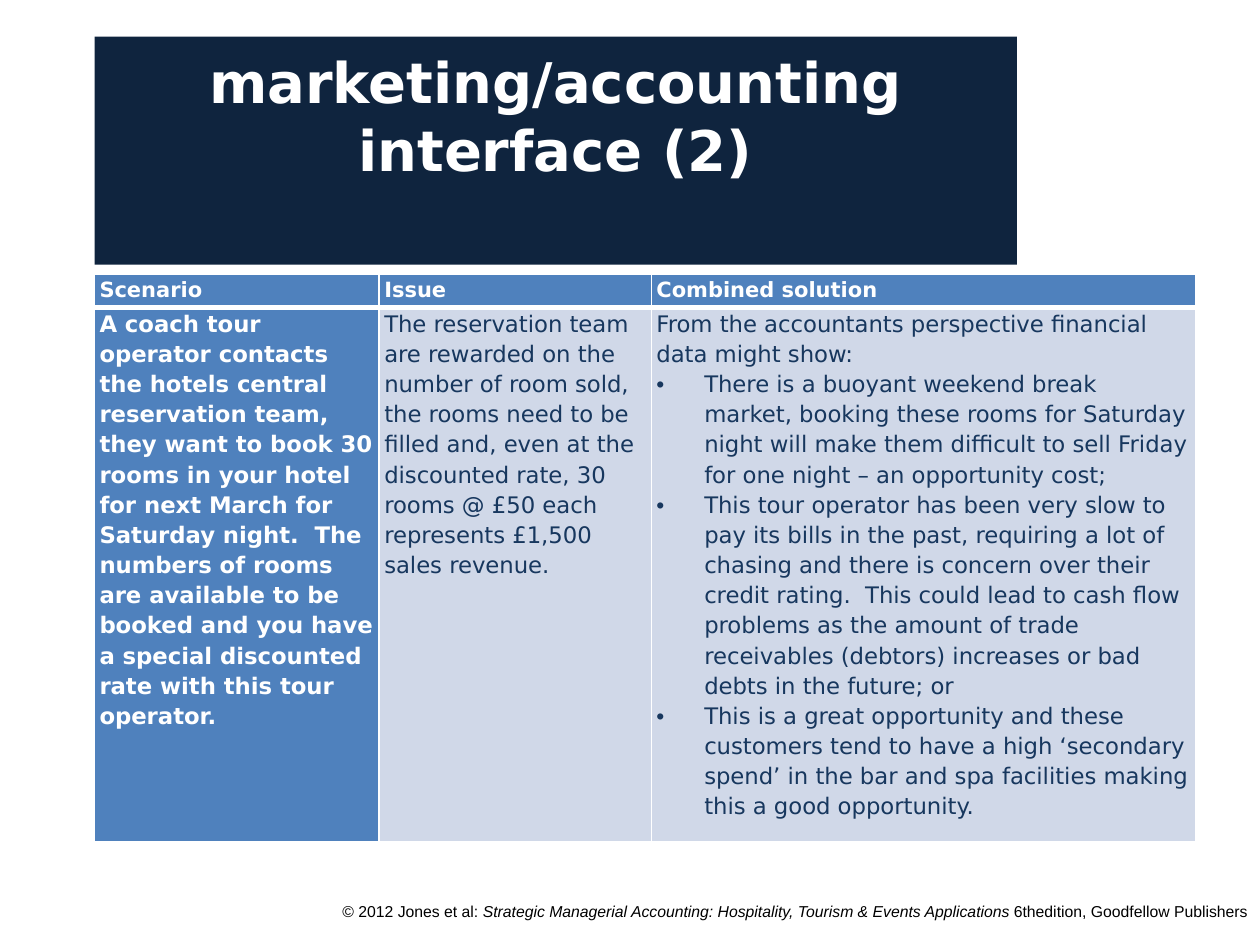
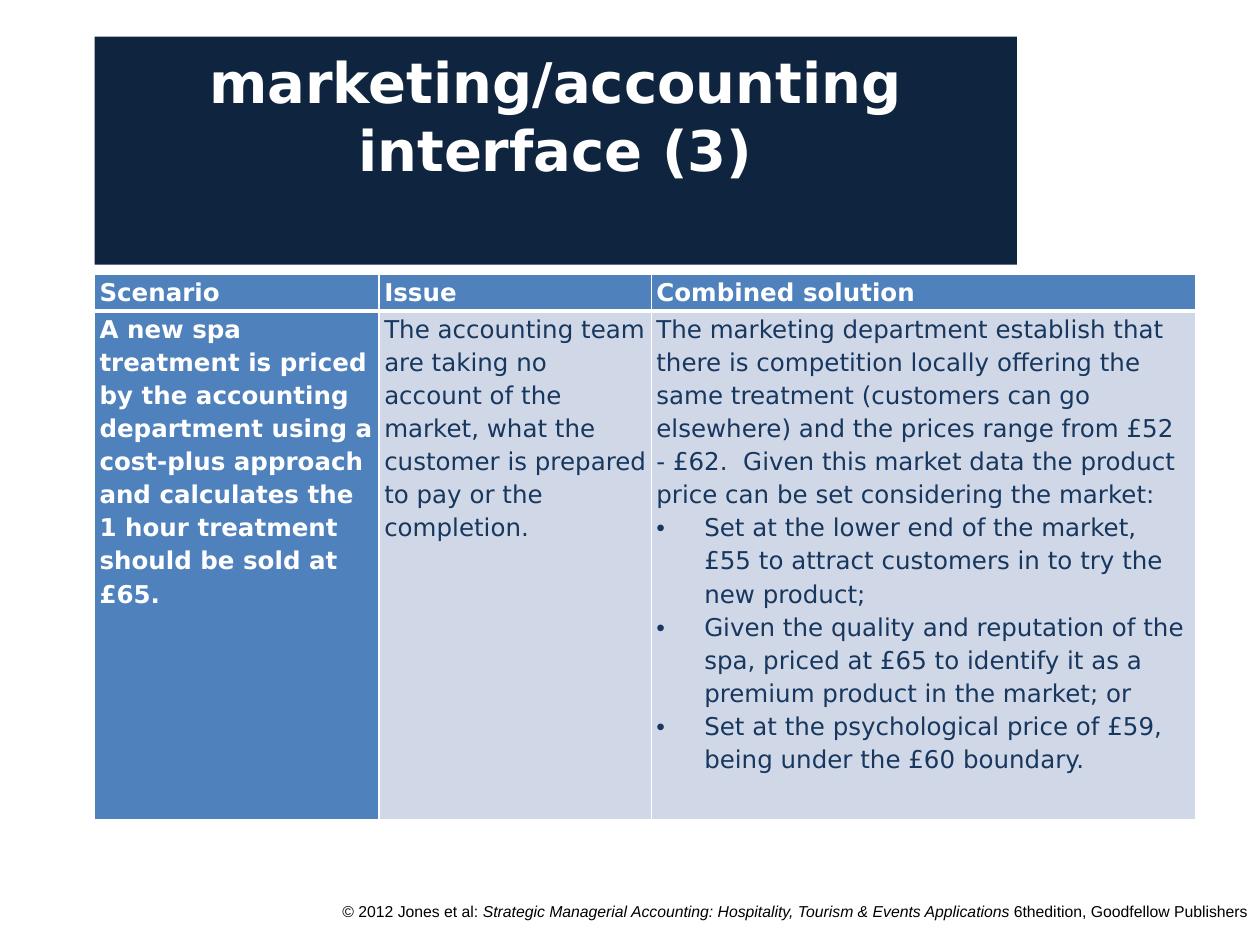
from lxml.etree import SubElement
from pptx import Presentation
from pptx.dml.color import RGBColor
from pptx.enum.text import MSO_ANCHOR, PP_ALIGN
from pptx.oxml.ns import qn
from pptx.util import Inches, Pt

COLORS = {
    "navy": "0F243E",
    "blue": "4F81BD",
    "pale": "D0D8E8",
    "ink": "17375E",
    "white": "FFFFFF",
    "black": "000000",
}
FONT = "DejaVu Sans"
FOOTER_FONT = "Arial"

# Boxes: left, top, width, height
TITLE_BOX = (0.75, 0.29, 7.32, 1.81)
FOOTER_BOX = (2.23, 7.11, 7.77, 0.39)
TABLE_LEFT, TABLE_TOP = 0.75, 2.18
COLUMN_WIDTHS = (2.26, 2.16, 4.32)
HEADINGS = ("Scenario", "Issue", "Combined solution")

FOOTER_RUNS = (
    ("© 2012 Jones et al: ", False),
    ("Strategic Managerial Accounting: Hospitality, Tourism & Events Applications ", True),
    ("6thedition, Goodfellow Publishers", False),
)

SLIDES = (
    {
        "title": "marketing/accounting interface (2)",
        "row_heights": (0.26, 4.15),
        "sizes": (12, 13),
        "scenario": "A coach tour operator contacts the hotels central reservation team, "
                    "they want to book 30 rooms in your hotel for next March for Saturday "
                    "night.  The numbers of rooms are available to be booked and you have a "
                    "special discounted rate with this tour operator.",
        "issue": "The reservation team are rewarded on the number of room sold, the rooms "
                 "need to be filled and, even at the discounted rate, 30 rooms @ £50 each "
                 "represents £1,500 sales revenue.",
        "solution": "From the accountants perspective financial data might show:",
        "options": (
            "There is a buoyant weekend break market, booking these rooms for Saturday "
            "night will make them difficult to sell Friday for one night – an "
            "opportunity cost;",
            "This tour operator has been very slow to pay its bills in the past, requiring "
            "a lot of chasing and there is concern over their credit rating.  This could "
            "lead to cash flow problems as the amount of trade receivables (debtors) "
            "increases or bad debts in the future; or",
            "This is a great opportunity and these customers tend to have a high "
            "‘secondary spend’ in the bar and spa facilities making this a good "
            "opportunity.",
        ),
    },
    {
        "title": "marketing/accounting interface (3)",
        "row_heights": (0.29, 4.04),
        "sizes": (14, 14),
        "scenario": "A new spa treatment is priced by the accounting department using a "
                    "cost-plus approach and calculates the 1 hour treatment should be sold "
                    "at £65.",
        "issue": "The accounting team are taking no account of the market, what the customer "
                 "is prepared to pay or the completion.",
        "solution": "The marketing department establish that there is competition locally "
                    "offering the same treatment (customers can go elsewhere) and the prices "
                    "range from £52 - £62.  Given this market data the product price can be "
                    "set considering the market:",
        "options": (
            "Set at the lower end of the market, £55 to attract customers in to try the "
            "new product;",
            "Given the quality and reputation of the spa, priced at £65 to identify it as a "
            "premium product in the market; or",
            "Set at the psychological price of £59, being under the £60 boundary.",
        ),
    },
)


def rgb(name):
    return RGBColor.from_string(COLORS[name])


def add_text(paragraph, text, size, color, font=FONT, bold=False, italic=False,
             align=None, line_spacing=None):
    """Append one formatted run to a paragraph."""
    if align is not None:
        paragraph.alignment = align
    if line_spacing is not None:
        paragraph.line_spacing = line_spacing
    run = paragraph.add_run()
    run.text = text
    run.font.name = font
    run.font.size = Pt(size)
    run.font.bold = bold
    run.font.italic = italic
    run.font.color.rgb = rgb(color)


def add_bullet(paragraph, indent=0.38):
    properties = paragraph._p.get_or_add_pPr()
    properties.set("marL", str(Inches(indent)))
    properties.set("indent", str(-Inches(indent)))
    SubElement(properties, qn("a:buFont")).set("typeface", FOOTER_FONT)
    SubElement(properties, qn("a:buChar")).set("char", "•")


def set_borders(cell, **widths):
    """Draw white cell borders; widths are in points, in the order L, R, T, B."""
    properties = cell._tc.get_or_add_tcPr()
    for side, width in widths.items():
        line = SubElement(properties, qn(f"a:ln{side}"), w=str(Pt(width)))
        fill = SubElement(line, qn("a:solidFill"))
        SubElement(fill, qn("a:srgbClr"), val=COLORS["white"])


def place_title(slide, text, box):
    title = slide.shapes.title
    title.left, title.top, title.width, title.height = map(Inches, box)
    title.fill.solid()
    title.fill.fore_color.rgb = rgb("navy")
    frame = title.text_frame
    frame.word_wrap = True
    frame.vertical_anchor = MSO_ANCHOR.TOP
    frame.margin_top = Inches(0.09)
    add_text(frame.paragraphs[0], text, 32, "white", bold=True, align=PP_ALIGN.CENTER)


def add_footer(slide, box):
    frame = slide.shapes.add_textbox(*map(Inches, box)).text_frame
    frame.word_wrap = True
    for text, italic in FOOTER_RUNS:
        add_text(frame.paragraphs[0], text, 9, "black", font=FOOTER_FONT,
                 italic=italic, align=PP_ALIGN.RIGHT)


def fill_cell(cell, texts, size, emphasized, is_header):
    """Fill a cell; every text after the first is a bullet."""
    thick, thin = 3, 1
    set_borders(cell, L=thin, R=thin, T=thin if is_header else thick,
                B=thick if is_header else thin)
    cell.fill.solid()
    cell.fill.fore_color.rgb = rgb("blue" if emphasized else "pale")
    cell.margin_left = cell.margin_right = Inches(0.04)
    cell.margin_top = cell.margin_bottom = 0
    frame = cell.text_frame
    for index, text in enumerate(texts):
        paragraph = frame.add_paragraph() if index else frame.paragraphs[0]
        if index:
            add_bullet(paragraph)
        add_text(paragraph, text, size, "white" if emphasized else "ink",
                 bold=emphasized, line_spacing=1.15)


def add_scenario_table(slide, content, left, top):
    heights = content["row_heights"]
    table = slide.shapes.add_table(
        len(heights), len(COLUMN_WIDTHS), Inches(left), Inches(top),
        Inches(sum(COLUMN_WIDTHS)), Inches(sum(heights))).table
    for column, width in zip(table.columns, COLUMN_WIDTHS):
        column.width = Inches(width)
    for row, height in zip(table.rows, heights):
        row.height = Inches(height)

    rows = (
        [(heading,) for heading in HEADINGS],
        [(content["scenario"],), (content["issue"],),
         (content["solution"], *content["options"])],
    )
    for row_index, (row, size) in enumerate(zip(rows, content["sizes"])):
        for column_index, texts in enumerate(row):
            is_header = row_index == 0
            fill_cell(table.cell(row_index, column_index), texts, size,
                      is_header or column_index == 0, is_header)


def add_scenario_slide(presentation, content):
    slide = presentation.slides.add_slide(presentation.slide_layouts[5])
    add_footer(slide, FOOTER_BOX)
    place_title(slide, content["title"], TITLE_BOX)
    add_scenario_table(slide, content, TABLE_LEFT, TABLE_TOP)


def main():
    presentation = Presentation()
    presentation.slide_width = Inches(10)
    presentation.slide_height = Inches(7.5)
    for content in SLIDES:
        add_scenario_slide(presentation, content)
    presentation.save("out.pptx")


if __name__ == "__main__":
    main()
